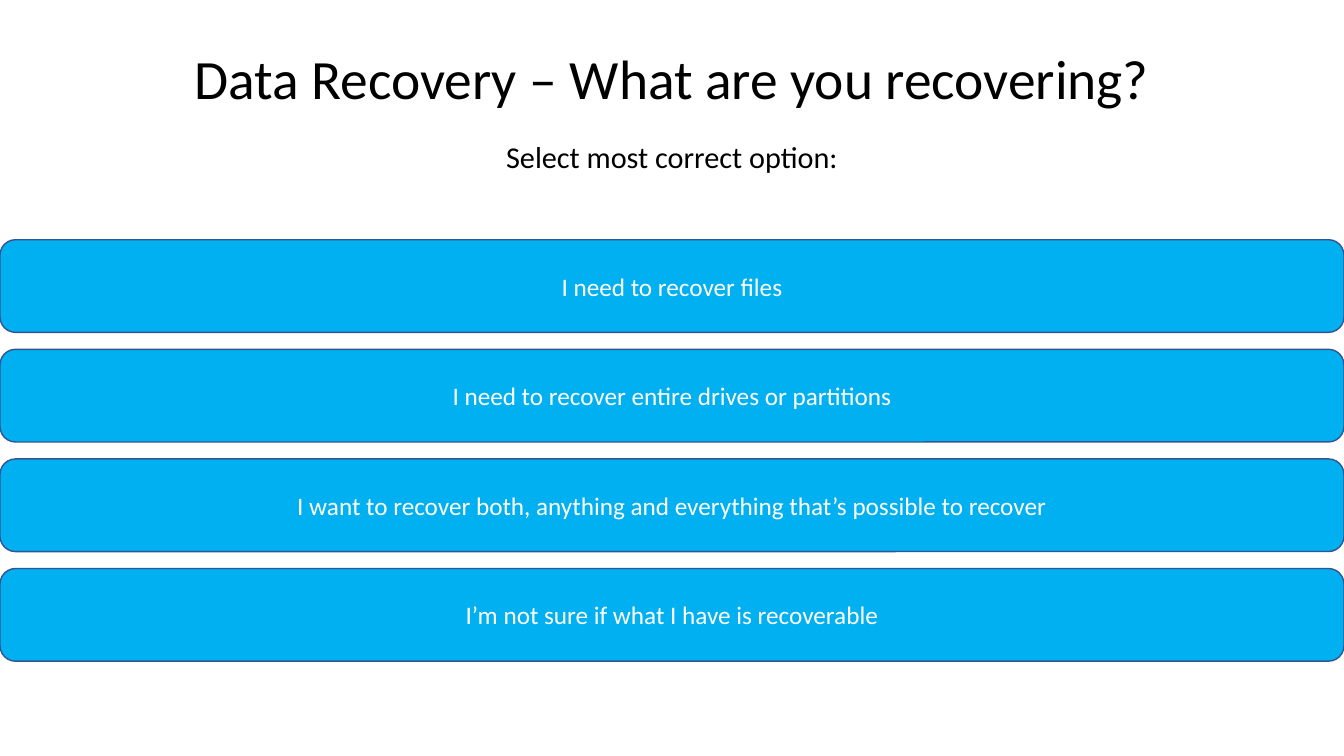
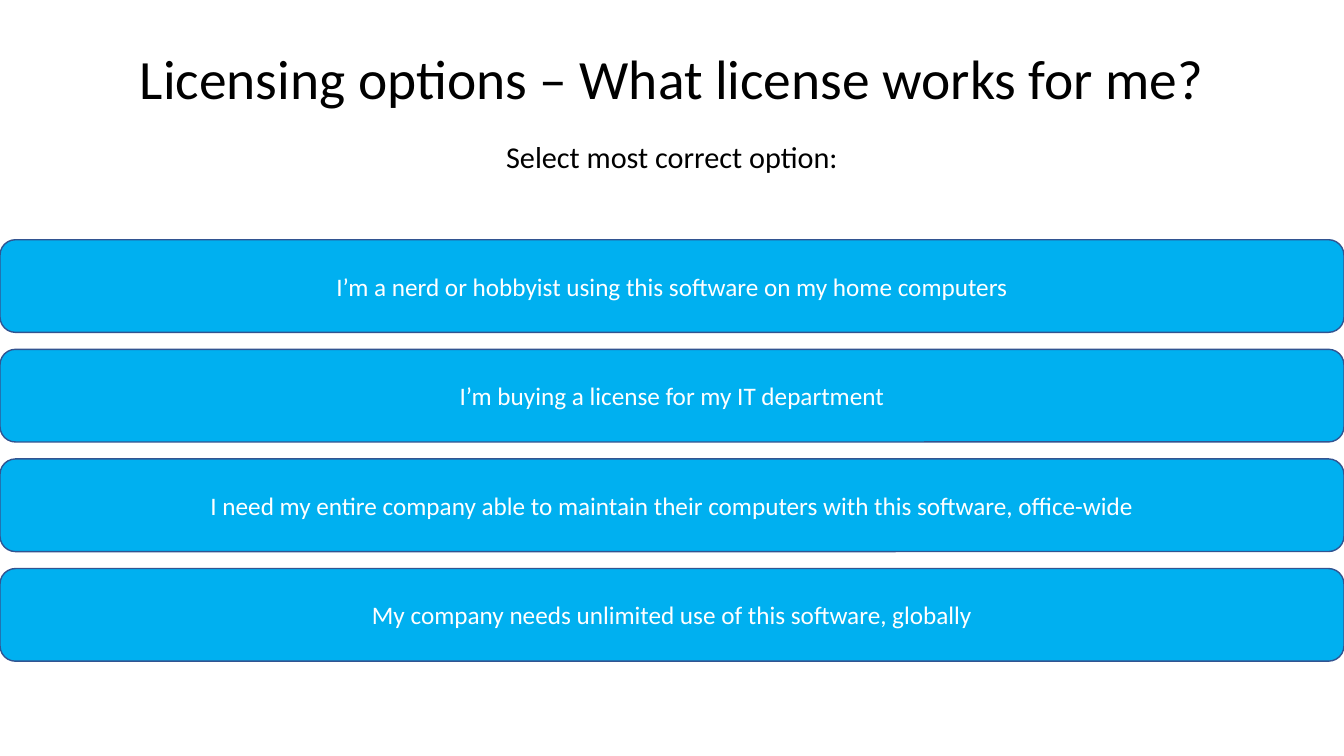
import dataclasses

import pptx
import pptx.dml.color
import pptx.enum.shapes
import pptx.enum.text
import pptx.util

Pt = pptx.util.Pt
RGB = pptx.dml.color.RGBColor.from_string


@dataclasses.dataclass(frozen=True)
class Theme:
    font: str = "Calibri"
    ink: str = "000000"
    button_fill: str = "00B0F0"
    button_line: str = "325491"
    button_ink: str = "FFFFFF"
    title_size: float = 39.6
    prompt_size: float = 21.6
    button_size: float = 18


THEME = Theme()

# Layout in points
PAGE_WIDTH, PAGE_HEIGHT = 960, 540
HEADING_BOX = (66, 28.8, 828, 104.4)
PROMPT_GAP = 22
BUTTON_TOP, BUTTON_HEIGHT, BUTTON_GAP = 171.2, 66.2, 12.1

# Content
PROMPT = "Select most correct option:"
QUESTIONS = {
    "Data Recovery – What are you recovering?": [
        "I need to recover files",
        "I need to recover entire drives or partitions",
        "I want to recover both, anything and everything that’s possible to recover",
        "I’m not sure if what I have is recoverable",
    ],
    "Licensing options – What license works for me?": [
        "I’m a nerd or hobbyist using this software on my home computers",
        "I’m buying a license for my IT department",
        "I need my entire company able to maintain their computers with this software, office-wide",
        "My company needs unlimited use of this software, globally",
    ],
}


def style_paragraph(para, size, color):
    para.alignment = pptx.enum.text.PP_ALIGN.CENTER
    for span in para.runs:
        span.font.name = THEME.font
        span.font.size = Pt(size)
        span.font.color.rgb = RGB(color)


deck = pptx.Presentation()
deck.slide_width, deck.slide_height = Pt(PAGE_WIDTH), Pt(PAGE_HEIGHT)
blank_layout = deck.slide_layouts[6]

for question, answers in QUESTIONS.items():
    page = deck.slides.add_slide(blank_layout)

    # Question and prompt
    heading = page.shapes.add_textbox(*map(Pt, HEADING_BOX))
    frame = heading.text_frame
    frame.word_wrap = True
    frame.vertical_anchor = pptx.enum.text.MSO_ANCHOR.MIDDLE
    frame.text = f"{question}\n{PROMPT}"
    for para, size in zip(frame.paragraphs, (THEME.title_size, THEME.prompt_size)):
        para.line_spacing = 0.9
        style_paragraph(para, size, THEME.ink)
    frame.paragraphs[1].space_before = Pt(PROMPT_GAP)

    # Answer buttons
    for row, answer in enumerate(answers):
        top = BUTTON_TOP + row * (BUTTON_HEIGHT + BUTTON_GAP)
        button = page.shapes.add_shape(
            pptx.enum.shapes.MSO_SHAPE.ROUNDED_RECTANGLE,
            Pt(0), Pt(top), Pt(PAGE_WIDTH), Pt(BUTTON_HEIGHT),
        )
        button.shadow.inherit = False
        button.fill.solid()
        button.fill.fore_color.rgb = RGB(THEME.button_fill)
        button.line.color.rgb = RGB(THEME.button_line)
        button.line.width = Pt(1)
        button.text_frame.word_wrap = True
        button.text_frame.vertical_anchor = pptx.enum.text.MSO_ANCHOR.MIDDLE
        button.text_frame.text = answer
        style_paragraph(button.text_frame.paragraphs[0], THEME.button_size, THEME.button_ink)

deck.save("out.pptx")
